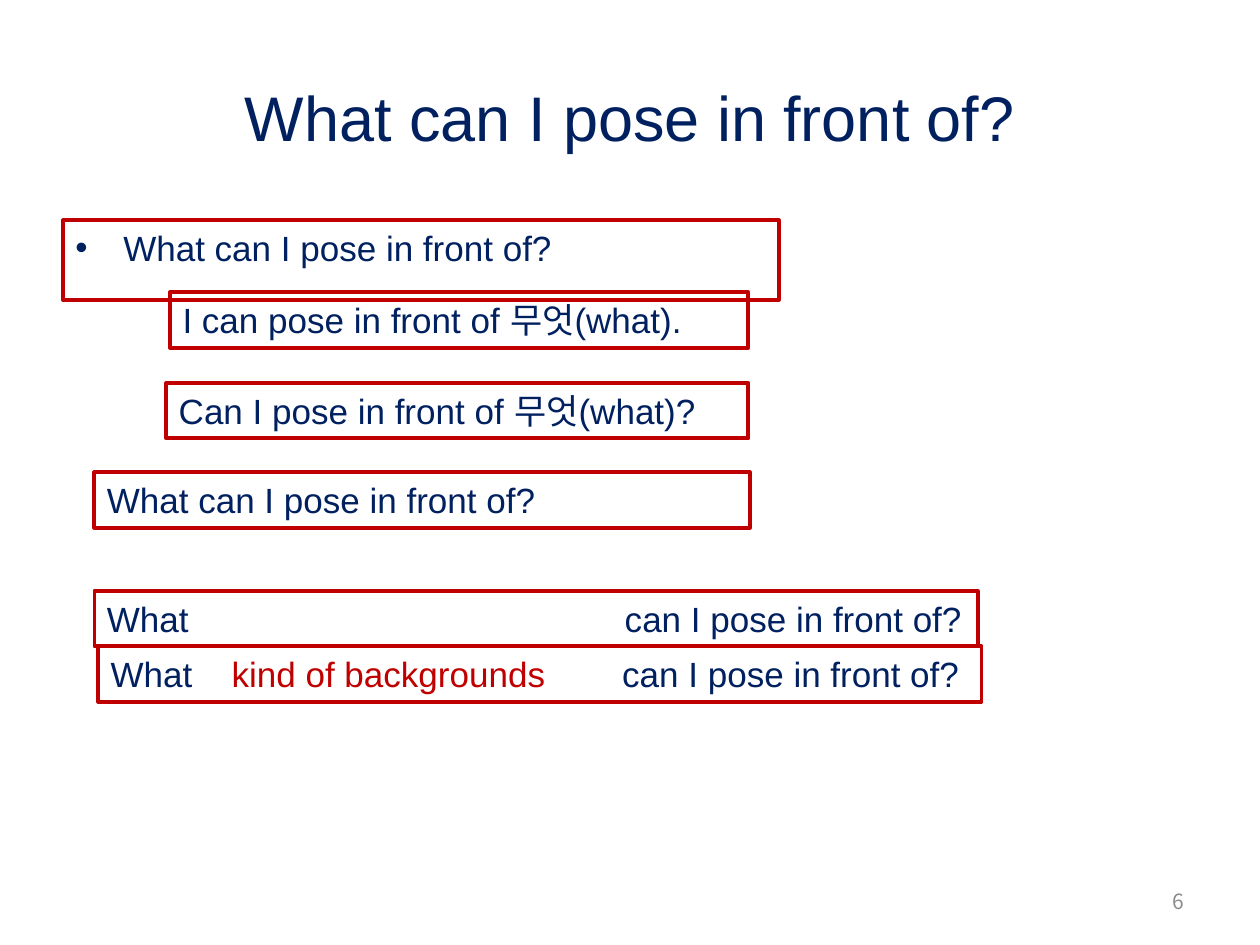
from pptx import Presentation
from pptx.dml.color import RGBColor
from pptx.enum.shapes import MSO_SHAPE
from pptx.enum.text import MSO_ANCHOR, PP_ALIGN
from pptx.oxml.ns import qn
from pptx.util import Inches, Pt
from lxml.etree import SubElement

COLORS = {"navy": "002060", "red": "C00000", "gray": "8C8C8C"}

presentation = Presentation()
presentation.slide_width = Inches(10)
presentation.slide_height = Inches(7.5)
slide = presentation.slides.add_slide(presentation.slide_layouts[6])


def add_run(paragraph, text, size, color, font="Arial"):
    run = paragraph.add_run()
    run.text = text
    run.font.size = Pt(size)
    run.font.name = font
    run.font.color.rgb = RGBColor.from_string(COLORS[color])


# Title and slide number
labels = [
    (0.5, 0.57, 9, 0.71, "What can I pose in front of?", 36, "navy", "Arial", PP_ALIGN.CENTER),
    (7.17, 6.95, 2.33, 0.4, "6", 12, "gray", "Noto Sans CJK KR", PP_ALIGN.RIGHT),
]
for left, top, width, height, text, size, color, font, alignment in labels:
    shape = slide.shapes.add_textbox(Inches(left), Inches(top), Inches(width), Inches(height))
    shape.text_frame.word_wrap = True
    shape.text_frame.vertical_anchor = MSO_ANCHOR.MIDDLE
    paragraph = shape.text_frame.paragraphs[0]
    paragraph.alignment = alignment
    add_run(paragraph, text, size, color, font)

# Outlined sentences: left, top, width, height, bullet, tab stops, runs
question = "What can I pose in front of?"
ending = "\tcan I pose in front of?"
sentences = [
    (0.5, 1.75, 5.68, 0.63, True, [], [(question, "navy")]),
    (1.35, 2.32, 4.59, 0.44, False, [], [("I can pose in front of 무엇(what).", "navy")]),
    (1.32, 3.04, 4.62, 0.44, False, [], [("Can I pose in front of 무엇(what)?", "navy")]),
    (0.75, 3.75, 5.2, 0.44, False, [], [(question, "navy")]),
    (0.75, 4.69, 7.01, 0.44, False, [4.11], [("What", "navy"), (ending, "navy")]),
    (0.78, 5.13, 7.01, 0.44, False, [0.96, 4.06],
     [("What", "navy"), ("\tkind of backgrounds", "red"), (ending, "navy")]),
]
for left, top, width, height, bullet, tab_stops, runs in sentences:
    shape = slide.shapes.add_shape(
        MSO_SHAPE.RECTANGLE, Inches(left), Inches(top), Inches(width), Inches(height))
    shape.shadow.inherit = False
    shape.fill.background()
    shape.line.color.rgb = RGBColor.from_string(COLORS["red"])
    shape.line.width = Pt(2.25)
    shape.text_frame.word_wrap = True
    shape.text_frame.vertical_anchor = MSO_ANCHOR.TOP
    paragraph = shape.text_frame.paragraphs[0]
    paragraph.alignment = PP_ALIGN.LEFT
    for text, color in runs:
        add_run(paragraph, text, 20, color)

    # Bullet and tab stops
    properties = paragraph._p.get_or_add_pPr()
    if bullet:
        properties.set("marL", str(Inches(0.38)))
        properties.set("indent", str(-Inches(0.38)))
        SubElement(properties, qn("a:buFont"), typeface="Arial")
        SubElement(properties, qn("a:buChar"), char="•")
    if tab_stops:
        tab_list = SubElement(properties, qn("a:tabLst"))
        for position in tab_stops:
            SubElement(tab_list, qn("a:tab"), pos=str(Inches(position)), algn="l")

presentation.save("out.pptx")
